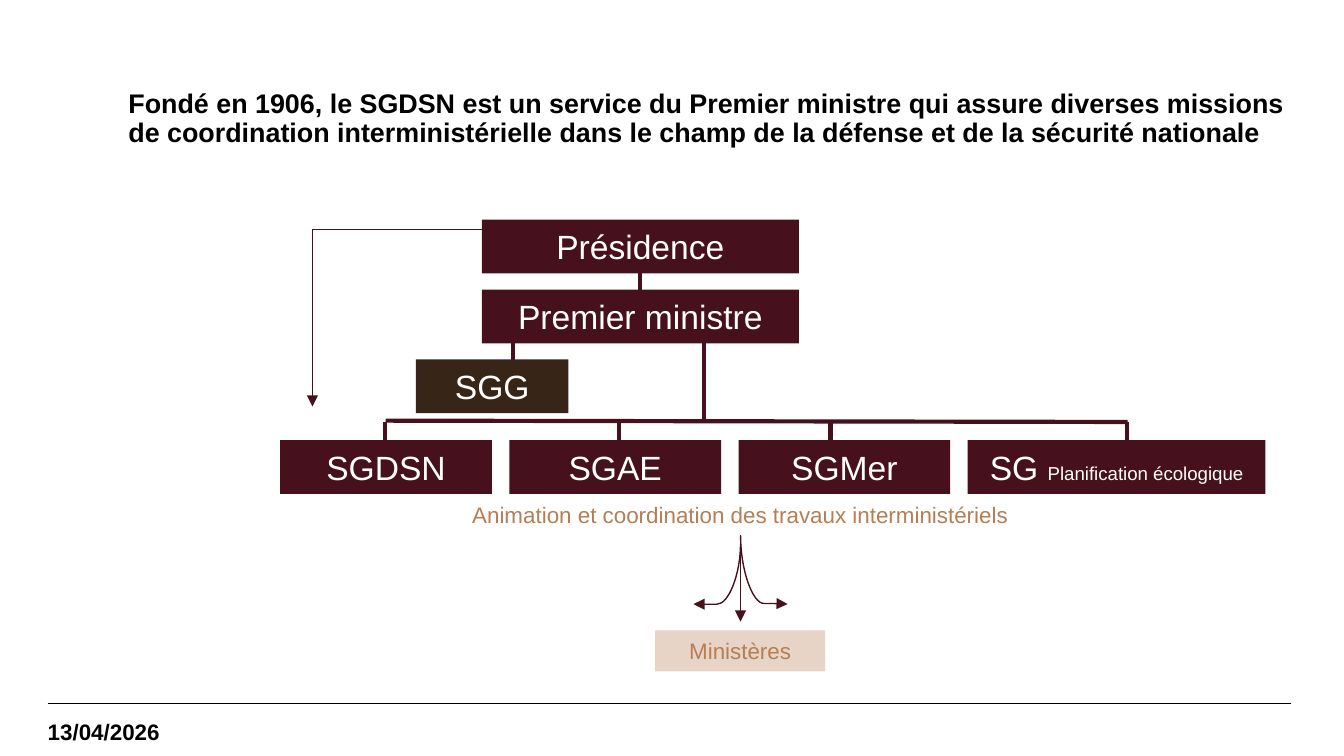
from pptx import Presentation
from pptx.dml.color import RGBColor
from pptx.enum.shapes import MSO_CONNECTOR, MSO_SHAPE
from pptx.enum.text import MSO_ANCHOR, PP_ALIGN
from pptx.oxml.ns import qn
from pptx.util import Pt
from lxml import etree

PX = 4572
RECT = MSO_SHAPE.RECTANGLE
STRAIGHT, CURVE = MSO_CONNECTOR.STRAIGHT, MSO_CONNECTOR.CURVE
TOP, MIDDLE = MSO_ANCHOR.TOP, MSO_ANCHOR.MIDDLE
LEFT, CENTER = PP_ALIGN.LEFT, PP_ALIGN.CENTER
WINE, BROWN, SAND, COPPER = "46111C", "372517", "E7D4C6", "B67E54"

prs = Presentation()
prs.slide_width, prs.slide_height = 2000 * PX, 1125 * PX
s = prs.slides.add_slide(prs.slide_layouts[6])


def add_text(text, box, size=18, color="FFFFFF", fill=None, bold=False,
             align=CENTER, anchor=TOP, margins=(20, 10, 20, 10), spacing=1.0, small=""):
    box = [v * PX for v in box]
    if fill:
        sp = s.shapes.add_shape(RECT, *box)
        sp.shadow.inherit = False
        sp.fill.solid()
        sp.fill.fore_color.rgb = RGBColor.from_string(fill)
        sp.line.fill.background()
    else:
        sp = s.shapes.add_textbox(*box)
    tf = sp.text_frame
    tf.word_wrap = True
    tf.vertical_anchor = anchor
    tf.margin_left, tf.margin_top, tf.margin_right, tf.margin_bottom = [m * PX for m in margins]
    p = tf.paragraphs[0]
    p.alignment = align
    p.line_spacing = spacing
    for part, pt in ((text, size), (small, 10)):
        if part:
            r = p.add_run()
            r.text = part
            r.font.name, r.font.size, r.font.bold = "Arial", Pt(pt), bold
            r.font.color.rgb = RGBColor.from_string(color)


def add_line(x1, y1, x2, y2, width=2.25, color=WINE, arrow=False, kind=STRAIGHT, turn=0, bend=0):
    c = s.shapes.add_connector(kind, x1 * PX, y1 * PX, x2 * PX, y2 * PX)
    c.line.width = Pt(width)
    c.line.color.rgb = RGBColor.from_string(color)
    spPr = c._element.spPr
    if arrow:
        etree.SubElement(spPr.find(qn("a:ln")), qn("a:tailEnd"), type="triangle")
    etree.SubElement(spPr, qn("a:effectLst"))
    if turn:
        spPr.find(qn("a:xfrm")).set("rot", str(turn * 60000))
        av = spPr.find(qn("a:prstGeom")).find(qn("a:avLst"))
        etree.SubElement(av, qn("a:gd"), name="adj1", fmla=f"val {bend}")


for x in (71, 78):
    add_line(x, 1047, x + 1843, 1047, width=0.8, color="000000")

add_text("13/04/2026", (71, 1050, 256, 76), size=12, color="000000", bold=True,
         align=LEFT, anchor=MIDDLE, margins=(0, 0, 0, 0))
add_text("Fondé en 1906, le SGDSN est un service du Premier ministre qui assure diverses "
         "missions de coordination interministérielle dans le champ de la défense et de la "
         "sécurité nationale", (168, 118, 1778, 118), size=14.4, color="000000", bold=True,
         align=LEFT, anchor=MIDDLE, margins=(23, 10, 20, 10), spacing=0.9)

for x, top, bottom in ((764, 500, 544), (952, 394, 440), (1048, 506, 626)):
    add_line(x, top, x, bottom)
add_line(1678, 628, 574, 626)
for x in (573, 921, 1236, 1677):
    add_line(x, 628, x, 672)

for text, x, y, w, fill in (
    ("Présidence", 717, 327, 472, WINE),
    ("Premier ministre", 717, 431, 472, WINE),
    ("SGG", 619, 535, 227, BROWN),
):
    add_text(text, (x, y, w, 80), fill=fill)

x = 417
for text, w, small in (
    ("SGDSN", 315, ""),
    ("SGAE", 315, ""),
    ("SGMer", 315, ""),
    ("SG ", 443, "Planification écologique"),
):
    add_text(text, (x, 655, w, 80), fill=WINE, small=small)
    x += w + 26

add_line(465, 342, 465, 605, width=0.75, arrow=True)
add_line(465, 342, 732, 342, width=0.75)

add_text("Animation et coordination des travaux interministériels", (622, 736, 960, 60),
         size=12, color=COPPER)
add_line(1102, 796, 1102, 925, width=0.75, arrow=True)
add_line(1188, 813, 1086, 883, width=0.75, arrow=True, kind=CURVE, turn=270, bend=99200)
add_line(1022, 819, 1112, 889, width=0.75, arrow=True, kind=CURVE, turn=90, bend=100200)
add_text("Ministères", (975, 938, 253, 61), size=12, color=COPPER, fill=SAND)

prs.save("out.pptx")
